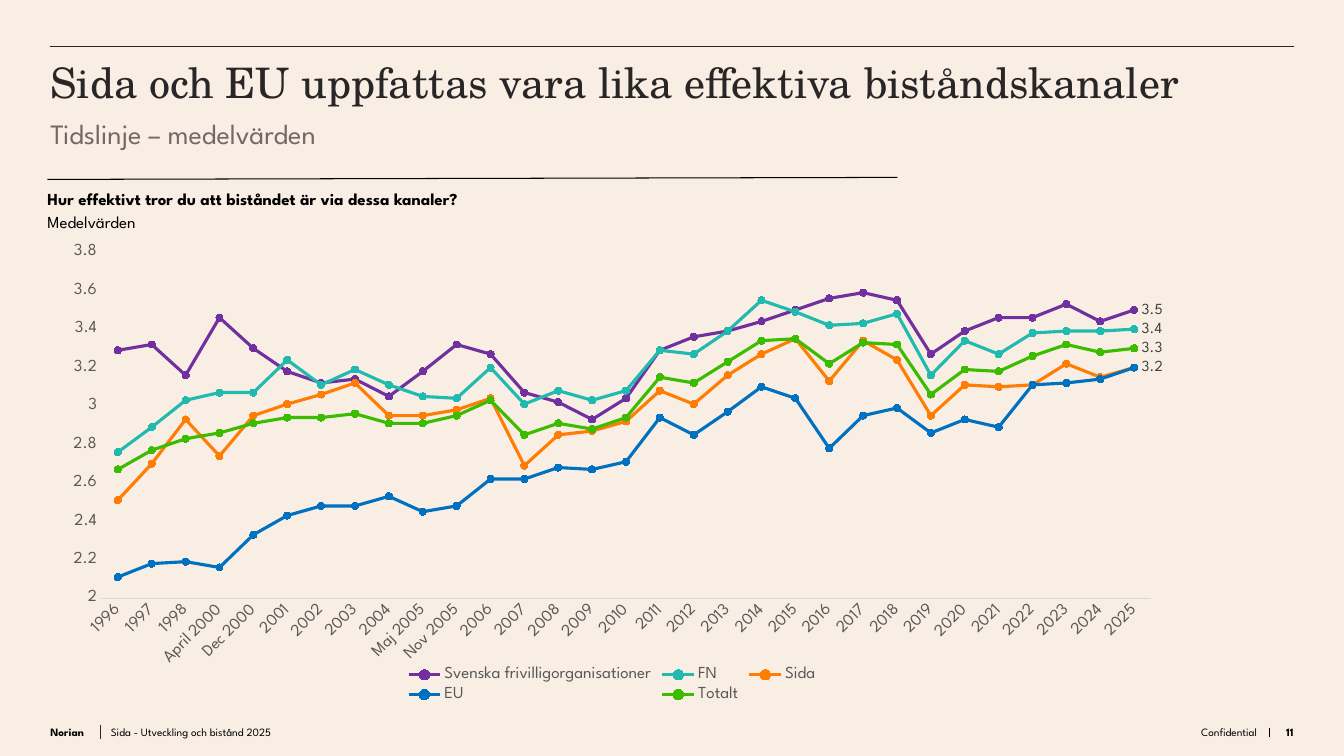
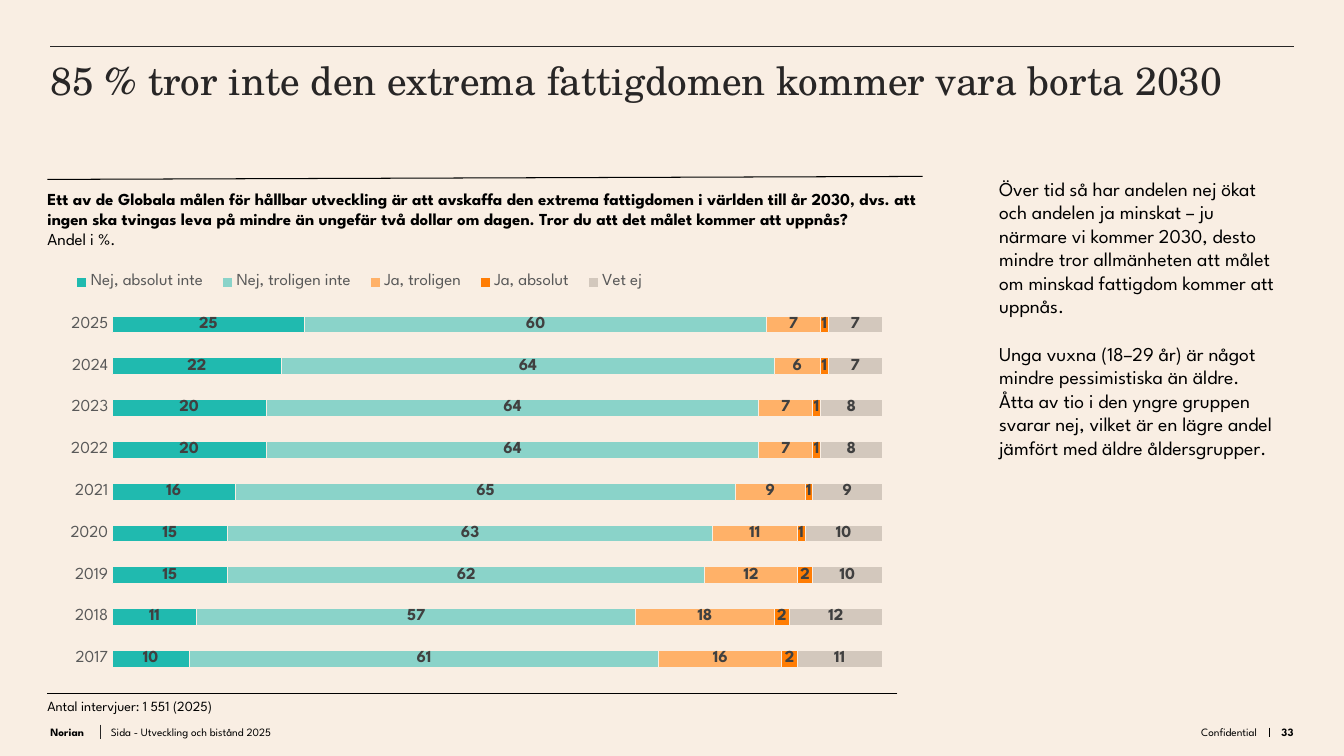
import pptx
import pptx.chart.data
import pptx.dml.color
import pptx.enum.chart
import pptx.enum.shapes
import pptx.enum.text
import pptx.oxml
import pptx.oxml.ns
import pptx.util

Inches = pptx.util.Inches
Pt = pptx.util.Pt
RGBColor = pptx.dml.color.RGBColor
ChartType = pptx.enum.chart.XL_CHART_TYPE
Align = pptx.enum.text.PP_ALIGN
Anchor = pptx.enum.text.MSO_ANCHOR
qn = pptx.oxml.ns.qn

CREAM = RGBColor(0xF9, 0xEE, 0xE3)
INK = RGBColor(0x28, 0x26, 0x26)
BLACK = RGBColor(0, 0, 0)
TAUPE = RGBColor(0x73, 0x68, 0x68)
AXIS_GREY = RGBColor(0x59, 0x59, 0x59)
LABEL_GREY = RGBColor(0x40, 0x40, 0x40)
RULE_GREY = RGBColor(0xD9, 0xD9, 0xD9)
PURPLE = RGBColor(0x70, 0x30, 0xA0)
TEAL = RGBColor(0x20, 0xBA, 0xAF)
PALE_TEAL = RGBColor(0x1D, 0xBA, 0xB0)
ORANGE = RGBColor(0xFF, 0x7D, 0x04)
PALE_ORANGE = RGBColor(0xFF, 0xB1, 0x68)
BLUE = RGBColor(0x00, 0x70, 0xC0)
GREEN = RGBColor(0x3C, 0xBC, 0x00)
DARK_GREEN = RGBColor(0x00, 0xB0, 0x50)
SAND = RGBColor(0xD3, 0xC8, 0xBD)

SANS = "League Spartan"
SERIF = "TeX Gyre Schola"
LEFT, RIGHT = 0.5, 12.83
PANEL_LEFT = 0.47

WAVES = ["1996", "1997", "1998", "April 2000", "Dec 2000", "2001", "2002", "2003", "2004",
         "Maj 2005", "Nov 2005"] + [str(year) for year in range(2006, 2026)]
# Name, line colour, marker colour, last value labelled, means
CHANNELS = [
    ("Svenska frivilligorganisationer", PURPLE, PURPLE, True,
     [3.29, 3.32, 3.16, 3.46, 3.3, 3.18, 3.12, 3.14, 3.05, 3.18, 3.32, 3.27, 3.07, 3.02, 2.93,
      3.04, 3.29, 3.36, 3.39, 3.44, 3.5, 3.56, 3.59, 3.55, 3.27, 3.39, 3.46, 3.46, 3.53, 3.44, 3.5]),
    ("FN", TEAL, TEAL, True,
     [2.76, 2.89, 3.03, 3.07, 3.07, 3.24, 3.11, 3.19, 3.11, 3.05, 3.04, 3.2, 3.01, 3.08, 3.03,
      3.08, 3.29, 3.27, 3.39, 3.55, 3.49, 3.42, 3.43, 3.48, 3.16, 3.34, 3.27, 3.38, 3.39, 3.39, 3.4]),
    ("Sida", ORANGE, ORANGE, False,
     [2.51, 2.7, 2.93, 2.74, 2.95, 3.01, 3.06, 3.12, 2.95, 2.95, 2.98, 3.04, 2.69, 2.85, 2.87,
      2.92, 3.08, 3.01, 3.16, 3.27, 3.35, 3.13, 3.34, 3.24, 2.95, 3.11, 3.1, 3.11, 3.22, 3.15, 3.2]),
    ("EU", BLUE, BLUE, True,
     [2.11, 2.18, 2.19, 2.16, 2.33, 2.43, 2.48, 2.48, 2.53, 2.45, 2.48, 2.62, 2.62, 2.68, 2.67,
      2.71, 2.94, 2.85, 2.97, 3.1, 3.04, 2.78, 2.95, 2.99, 2.86, 2.93, 2.89, 3.11, 3.12, 3.14, 3.2]),
    ("Totalt", GREEN, DARK_GREEN, True,
     [2.67, 2.77, 2.83, 2.86, 2.91, 2.94, 2.94, 2.96, 2.91, 2.91, 2.95, 3.03, 2.85, 2.91, 2.88,
      2.94, 3.15, 3.12, 3.23, 3.34, 3.35, 3.22, 3.33, 3.32, 3.06, 3.19, 3.18, 3.26, 3.32, 3.28, 3.3]),
]

YEARS = [str(year) for year in range(2017, 2026)]
# Name, colour, opacity in percent, shares
ANSWERS = [
    ("Nej, absolut inte", TEAL, 100, [10, 11, 15, 15, 16, 20, 20, 22, 25]),
    ("Nej, troligen inte", PALE_TEAL, 50, [61, 57, 62, 63, 65, 64, 64, 64, 60]),
    ("Ja, troligen", PALE_ORANGE, 100, [16, 18, 12, 11, 9, 7, 7, 6, 7]),
    ("Ja, absolut", ORANGE, 100, [2, 2, 2, 1, 1, 1, 1, 1, 1]),
    ("Vet ej", SAND, 100, [11, 12, 10, 10, 9, 8, 8, 7, 7]),
]


def set_font(font, size, color=BLACK, bold=False, name=SANS):
    for attribute, value in {"name": name, "size": Pt(size), "bold": bold}.items():
        setattr(font, attribute, value)
    font.color.rgb = color


def fill_frame(frame, lines, size, color=BLACK, name=SANS, align=Align.LEFT,
               anchor=Anchor.TOP, top_inset=0, gap=0):
    """Write (text, bold) lines as paragraphs with gap points between them."""
    settings = {"word_wrap": True, "auto_size": pptx.enum.text.MSO_AUTO_SIZE.NONE,
                "vertical_anchor": anchor, "margin_left": 0, "margin_right": 0,
                "margin_top": Inches(top_inset), "margin_bottom": 0}
    for attribute, value in settings.items():
        setattr(frame, attribute, value)
    for index, (text, bold) in enumerate(lines):
        paragraph = frame.add_paragraph() if index else frame.paragraphs[0]
        paragraph.alignment = align
        paragraph.space_before = Pt(gap if index else 0)
        run = paragraph.add_run()
        run.text = text
        set_font(run.font, size, color, bold, name)


def add_text(slide, box, lines, size, **style):
    holder = slide.shapes.add_textbox(*map(Inches, box))
    fill_frame(holder.text_frame, lines, size, **style)


def place(holder, box):
    for attribute, value in zip(("left", "top", "width", "height"), box):
        setattr(holder, attribute, Inches(value))


def add_rule(slide, start, end, color=BLACK, width=0.5):
    rule = slide.shapes.add_connector(pptx.enum.shapes.MSO_CONNECTOR.STRAIGHT,
                                      *map(Inches, start + end))
    rule.line.color.rgb = color
    rule.line.width = Pt(width)
    rule.element.spPr.append(pptx.oxml.parse_xml(
        '<a:effectLst %s/>' % pptx.oxml.ns.nsdecls("a")))


def add_footer(slide, number, top=7.16, height=0.17):
    parts = [
        (LEFT, 0.5, "Norian", True, Align.LEFT),
        (1.1, 7.8, "Sida - Utveckling och bistånd 2025", False, Align.LEFT),
        (10.27, 2.2, "Confidential", False, Align.RIGHT),
        (12.59, 0.24, str(number), True, Align.RIGHT),
    ]
    for left, width, text, bold, align in parts:
        add_text(slide, (left, top, width, height), [(text, bold)], 8,
                 align=align, anchor=Anchor.BOTTOM)
    add_rule(slide, (1, top + 0.03), (1, top + 0.17), INK)
    add_rule(slide, (12.59, top + 0.06), (12.59, top + 0.15))


def start_slide(deck, layout, title, title_size, number):
    slide = deck.slides.add_slide(deck.slide_layouts.get_by_name(layout))
    add_rule(slide, (LEFT, 0.46), (RIGHT, 0.46), INK)
    place(slide.shapes.title, (LEFT, 0.46, 12.32, 0.71))
    fill_frame(slide.shapes.title.text_frame, [(title, False)], title_size,
               color=INK, name=SERIF, top_inset=0.1)
    add_footer(slide, number)
    return slide


def add_subtitle(slide, text):
    holder = slide.placeholders[1]
    place(holder, (LEFT, 1.16, 9.08, 0.47))
    fill_frame(holder.text_frame, [(text, False)], 20, color=TAUPE)
    properties = holder.text_frame.paragraphs[0]._p.get_or_add_pPr()
    properties.set("marL", "0")
    properties.set("indent", "0")
    properties.append(pptx.oxml.parse_xml('<a:buNone %s/>' % pptx.oxml.ns.nsdecls("a")))


def manual_layout(box, inner=False):
    """Layout element from left, top, width and height as shares of the chart."""
    target = '<c:layoutTarget val="inner"/>' if inner else ""
    modes = '<c:xMode val="edge"/><c:yMode val="edge"/>'
    sizes = "".join('<c:%s val="%s"/>' % pair for pair in zip("xywh", box))
    return pptx.oxml.parse_xml('<c:layout %s><c:manualLayout>%s</c:manualLayout></c:layout>'
                               % (pptx.oxml.ns.nsdecls("c"), target + modes + sizes))


def add_chart(slide, kind, box, categories, rows, plot_box, legend_box, axis_color):
    data = pptx.chart.data.CategoryChartData()
    data.categories = categories
    for row in rows:
        data.add_series(row[0], row[-1])
    chart = slide.shapes.add_chart(kind, *map(Inches, box), data).chart
    set_font(chart.font, 10)
    chart.has_title = False
    chart.has_legend = True
    chart.legend.position = pptx.enum.chart.XL_LEGEND_POSITION.BOTTOM
    chart.legend.include_in_layout = False
    set_font(chart.legend.font, 12, AXIS_GREY)
    chart.element.find(".//" + qn("c:legendPos")).addnext(manual_layout(legend_box))
    plot_area = chart.element.find(".//" + qn("c:plotArea"))
    for layout in plot_area.findall(qn("c:layout")):
        plot_area.remove(layout)
    plot_area.insert(0, manual_layout(plot_box, inner=True))
    chart.plots[0].vary_by_categories = False
    for axis in (chart.category_axis, chart.value_axis):
        axis.has_major_gridlines = False
        axis.major_tick_mark = axis.minor_tick_mark = pptx.enum.chart.XL_TICK_MARK.NONE
        set_font(axis.tick_labels.font, 12, AXIS_GREY)
    chart.category_axis.format.line.color.rgb = axis_color
    chart.category_axis.format.line.width = Pt(0.75)
    return chart


def add_channel_chart(slide, box):
    chart = add_chart(slide, ChartType.LINE_MARKERS, box, WAVES, CHANNELS,
                      (0.045, 0.035, 0.935, 0.735), (0.09, 0.005, 0.55, 0.05), RULE_GREY)
    scale = {"minimum_scale": 2, "maximum_scale": 3.8, "major_unit": 0.2}
    for attribute, value in scale.items():
        setattr(chart.value_axis, attribute, value)
    chart.value_axis.format.line.fill.background()
    wave_text = chart.category_axis.tick_labels.font._element.getparent().getparent().getparent()
    wave_text.find(qn("a:bodyPr")).set("rot", "-2700000")
    for series, (_, color, marker_color, labelled, means) in zip(chart.plots[0].series, CHANNELS):
        series.smooth = False
        series.format.line.color.rgb = color
        series.format.line.width = Pt(2.25)
        series.marker.style = pptx.enum.chart.XL_MARKER_STYLE.CIRCLE
        series.marker.size = 5
        series.marker.format.fill.solid()
        series.marker.format.fill.fore_color.rgb = marker_color
        series.marker.format.line.color.rgb = marker_color
        if labelled:
            label = series.points[len(means) - 1].data_label
            set_font(label.font, 11, LABEL_GREY)
            label.position = pptx.enum.chart.XL_LABEL_POSITION.RIGHT


def add_answer_chart(slide, box):
    chart = add_chart(slide, ChartType.BAR_STACKED, box, YEARS, ANSWERS,
                      (0.073, 0.114, 0.909, 0.864), (0.015, 0.035, 0.7, 0.06), CREAM)
    chart.value_axis.minimum_scale = 0
    chart.value_axis.maximum_scale = 100
    chart.value_axis.visible = False
    chart.plots[0].gap_width = 150
    chart.plots[0].overlap = 100
    for series, (_, color, opacity, _) in zip(chart.plots[0].series, ANSWERS):
        series.format.fill.solid()
        series.format.fill.fore_color.rgb = color
        if opacity < 100:
            tint = series._element.find(".//" + qn("a:srgbClr"))
            tint.append(pptx.oxml.parse_xml('<a:alpha %s val="%d"/>' % (
                pptx.oxml.ns.nsdecls("a"), opacity * 1000)))
        series.format.line.color.rgb = CREAM
        series.format.line.width = Pt(0.75)
        series.data_labels.show_value = True
        set_font(series.data_labels.font, 12, LABEL_GREY, True)


def build_channel_slide(deck):
    slide = start_slide(deck, "Title and Content",
                        "Sida och EU uppfattas vara lika effektiva biståndskanaler", 30, 11)
    add_subtitle(slide, "Tidslinje – medelvärden")
    add_rule(slide, (8.9, 1.76), (PANEL_LEFT, 1.78), width=0.75)
    add_text(slide, (PANEL_LEFT, 1.87, 12.05, 0.28),
             [("Hur effektivt tror du att biståndet är via dessa kanaler?", True)], 12)
    add_text(slide, (PANEL_LEFT, 2.1, 1.11, 0.2), [("Medelvärden", False)], 12)
    add_channel_chart(slide, (LEFT, 2.34, 11.14, 4.67))


def build_poverty_slide(deck):
    slide = start_slide(deck, "Title Only",
                        "85 % tror inte den extrema fattigdomen kommer vara borta 2030", 28, 33)
    add_rule(slide, (9.15, 1.75), (PANEL_LEFT, 1.78), width=0.75)
    add_text(slide, (PANEL_LEFT, 1.87, 8.68, 0.46), [
        ("Ett av de Globala målen för hållbar utveckling är att avskaffa den extrema fattigdomen "
         "i världen till år 2030, dvs. att ingen ska tvingas leva på mindre än ungefär två dollar "
         "om dagen. Tror du att det målet kommer att uppnås?", True),
        ("Andel i %.", False)], 12)
    add_answer_chart(slide, (LEFT, 2.52, 8.4, 4.32))
    add_rule(slide, (8.9, 6.88), (PANEL_LEFT, 6.88), width=0.75)
    add_text(slide, (PANEL_LEFT, 6.92, 5.87, 0.17),
             [("Antal intervjuer: 1 551 (2025)", False)], 10)
    add_text(slide, (9.91, 1.75, 2.76, 5.42), [
        ("Över tid så har andelen nej ökat och andelen ja minskat – ju närmare vi kommer 2030, "
         "desto mindre tror allmänheten att målet om minskad fattigdom kommer att uppnås.", False),
        ("Unga vuxna (18–29 år) är något mindre pessimistiska än äldre. Åtta av tio i den yngre "
         "gruppen svarar nej, vilket är en lägre andel jämfört med äldre åldersgrupper.", False),
    ], 14, gap=17)


def main():
    deck = pptx.Presentation()
    deck.slide_width, deck.slide_height = Inches(13.33), Inches(7.5)
    backdrop = deck.slide_master.background.fill
    backdrop.solid()
    backdrop.fore_color.rgb = CREAM
    build_channel_slide(deck)
    build_poverty_slide(deck)
    deck.save("out.pptx")


if __name__ == "__main__":
    main()
